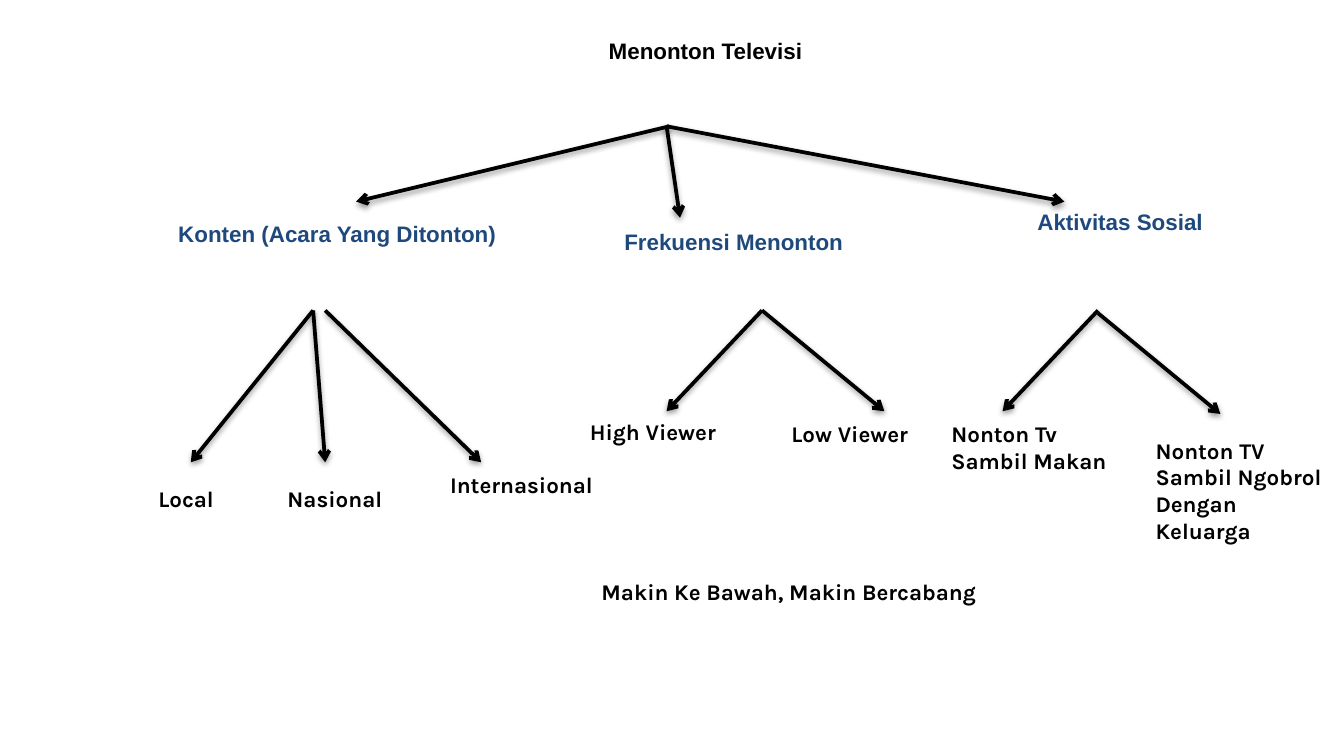
from dataclasses import dataclass

from lxml import etree
from pptx import Presentation
from pptx import util as u
from pptx.dml.color import RGBColor
from pptx.enum import shapes, text
from pptx.oxml import parse_xml
from pptx.oxml.ns import nsdecls, qn


@dataclass(frozen=True)
class Theme:
    ink: str = "000000"
    branch: str = "1F497D"
    heading_font: str = "Arial"
    leaf_font: str = "Karla"
    size: int = 12
    line_width: float = 2


class TreeSlide:
    def __init__(self, slide, theme):
        self.slide = slide
        self.theme = theme

    def label(self, words, left, top, width, height, font, color, align):
        box = self.slide.shapes.add_textbox(*map(u.Inches, (left, top, width, height)))
        frame = box.text_frame
        frame.word_wrap = True
        frame.vertical_anchor = text.MSO_ANCHOR.TOP
        frame.text = words
        for paragraph in frame.paragraphs:
            paragraph.alignment = align
            paragraph.font.name = font
            paragraph.font.size = u.Pt(self.theme.size)
            paragraph.font.bold = True
            paragraph.font.color.rgb = RGBColor.from_string(color)

    def heading(self, words, left, top, width, height, color):
        self.label(words, left, top, width, height,
                   self.theme.heading_font, color, text.PP_ALIGN.CENTER)

    def leaf(self, words, left, top, width, height=0.3, align=text.PP_ALIGN.LEFT):
        self.label(words, left, top, width, height,
                   self.theme.leaf_font, self.theme.ink, align)

    def arrow(self, start, end):
        arrow = self.slide.shapes.add_connector(
            shapes.MSO_CONNECTOR.STRAIGHT, *map(u.Inches, (*start, *end)))
        arrow.line.color.rgb = RGBColor.from_string(self.theme.ink)
        arrow.line.width = u.Pt(self.theme.line_width)
        etree.SubElement(arrow.get_or_add_ln(), qn("a:tailEnd"), type="arrow")
        arrow.element.spPr.append(parse_xml(
            f'<a:effectLst {nsdecls("a")}>'
            f'<a:outerShdw blurRad="{u.Pt(3.1)}" dist="{u.Pt(1.6)}" dir="5400000" rotWithShape="0">'
            f'<a:srgbClr val="{self.theme.ink}"><a:alpha val="38000"/></a:srgbClr>'
            '</a:outerShdw></a:effectLst>'))


def main():
    deck = Presentation()
    deck.slide_width = u.Inches(10)
    deck.slide_height = deck.slide_width * 9 // 16
    theme = Theme()
    tree = TreeSlide(deck.slides.add_slide(deck.slide_layouts[6]), theme)

    tree.heading("Menonton Televisi", 1, 0.23, 8.5, 0.94, theme.ink)
    branches = [
        ("Konten (Acara Yang Ditonton)", 0.51, 1.59, 4),
        ("Frekuensi Menonton", 3.46, 1.65, 4),
        ("Aktivitas Sosial", 7.17, 1.5, 2.33),
    ]
    for words, left, top, width in branches:
        tree.heading(words, left, top, width, 0.56, theme.branch)

    links = [
        ((4.98, 0.94), (2.65, 1.5)),
        ((4.96, 0.94), (5.06, 1.62)),
        ((4.96, 0.94), (7.92, 1.5)),
        ((2.33, 2.31), (1.42, 3.44)),
        ((2.33, 2.31), (2.42, 3.44)),
        ((2.42, 2.31), (3.58, 3.44)),
        ((5.67, 2.31), (4.96, 3.06)),
        ((5.67, 2.31), (6.58, 3.06)),
        ((8.17, 2.31), (7.46, 3.06)),
        ((8.17, 2.33), (9.08, 3.08)),
    ]
    for start, end in links:
        tree.arrow(start, end)

    leaves = [
        ("Local", 1.08, 3.56, 0.96),
        ("Nasional", 2.04, 3.56, 1.21),
        ("Internasional", 3.25, 3.46, 1.92),
        ("High Viewer", 4.29, 3.06, 1.29),
        ("Low Viewer", 5.79, 3.08, 1.19),
        ("Nonton Tv\nSambil Makan", 6.98, 3.08, 1.52, 0.5),
        ("Nonton TV\nSambil Ngobrol Dengan\nKeluarga", 8.5, 3.2, 1.5, 0.91),
    ]
    for leaf in leaves:
        tree.leaf(*leaf)
    tree.leaf("Makin Ke Bawah, Makin Bercabang", 3.58, 4.25, 4.58,
              align=text.PP_ALIGN.CENTER)

    deck.save("out.pptx")


if __name__ == "__main__":
    main()
